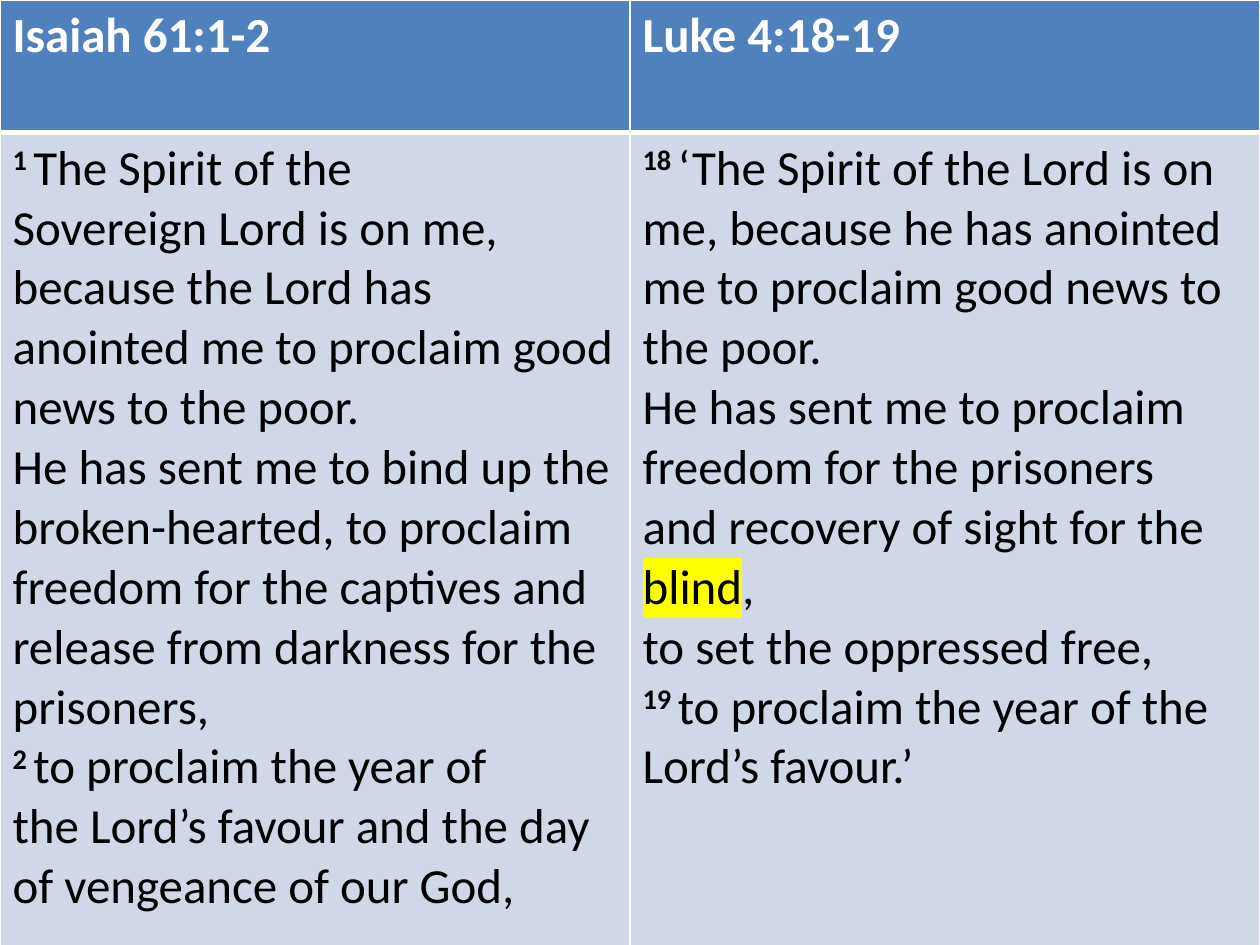
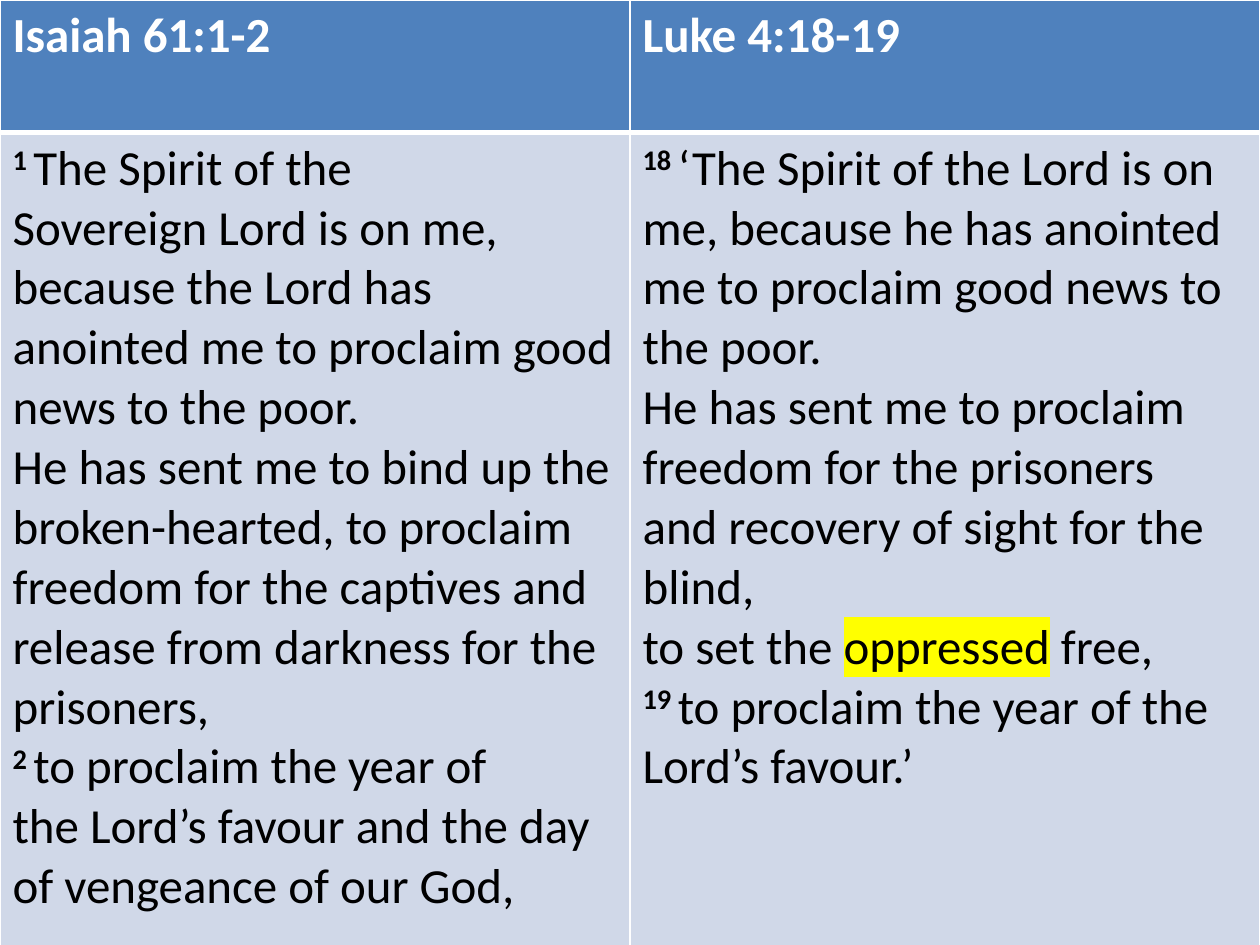
from pptx import Presentation
from pptx.dml.color import RGBColor as RGB
from pptx.oxml.ns import qn
from pptx.util import Inches, Pt
from lxml.etree import SubElement as sub, Element

WHITE = RGB(0xFF, 0xFF, 0xFF)
BLACK = RGB(0, 0, 0)
YELLOW = RGB(0xFF, 0xFF, 0)
HEADER_BLUE = RGB(0x4F, 0x81, 0xBD)
BODY_BLUE = RGB(0xD0, 0xD8, 0xE8)

NBSP = chr(160)
BLANK_LAYOUT = 6
HEADER_SHARE, BODY_SHARE = 0.14, 0.88

HEADINGS = ("Isaiah 61:1-2", "Luke 4:18-19")
ISAIAH = (
    ("1", "The Spirit of the Sovereign~Lord~is on me, because the~Lord~has "
          "anointed me to proclaim good news to the poor.\n"
          "He has sent me to bind up the broken-hearted, to proclaim freedom "
          "for the captives and release from darkness for the prisoners, \n"),
    ("2", "to proclaim the year of the~Lord’s favour and the day of vengeance "
          "of our God,"),
)
LUKE = (
    ("18", "‘The Spirit of the Lord is on me, because he has anointed me to "
           "proclaim good news to the poor.\n"
           "He has sent me to proclaim freedom for the prisoners\n"
           "and recovery of sight for the blind,\n"
           "to set the oppressed free,\n"),
    ("19", "to proclaim the year of the Lord’s favour.’"),
)
HIGHLIGHTS = ("blind", "oppressed")


class Deck:
    """Hold the presentation style and the slide being built."""

    font, size = "Calibri", Pt(28)

    def __init__(self):
        self.prs = Presentation()
        self.prs.slide_width, self.prs.slide_height = Inches(10), Inches(7.5)

    def new_slide(self):
        self.s = self.prs.slides.add_slide(self.prs.slide_layouts[BLANK_LAYOUT])

    def run(self, p, text, color=BLACK, bold=False, raised=False, marked=False):
        for i, line in enumerate(text.replace("~", NBSP).split("\n")):
            if i:
                p.add_line_break()
            if not line:
                continue
            r = p.add_run()
            r.text = line
            f = r.font
            f.name, f.size, f.bold = self.font, self.size, bold
            f.color.rgb = color
            rpr = f._element
            if raised:
                rpr.set("baseline", "30000")
            if marked:
                hl = Element(qn("a:highlight"))
                sub(hl, qn("a:srgbClr"), val=str(YELLOW))
                rpr.find(qn("a:solidFill")).addnext(hl)

    def verses(self, p, passage, marked_word):
        for number, text in passage:
            self.run(p, number + NBSP, bold=True, raised=True)
            before, word, after = text.partition(marked_word)
            self.run(p, before)
            self.run(p, word, marked=True)
            self.run(p, after)

    def style_cell(self, cell, fill, borders):
        cell.fill.solid()
        cell.fill.fore_color.rgb = fill
        tc_pr = cell._tc.get_or_add_tcPr()
        for i, (side, width) in enumerate(borders.items()):
            ln = Element(qn(f"a:ln{side}"), w=str(Pt(width)))
            sub(sub(ln, qn("a:solidFill")), qn("a:srgbClr"), val=str(WHITE))
            tc_pr.insert(i, ln)

    def comparison(self, headings, passages, marked_word):
        w, h = self.prs.slide_width, self.prs.slide_height
        row_heights = [int(h * share) for share in (HEADER_SHARE, BODY_SHARE)]
        table = self.s.shapes.add_table(
            2, len(headings), 0, 0, w, sum(row_heights)).table
        for row, height in zip(table.rows, row_heights):
            row.height = height
        for col, (heading, passage) in enumerate(zip(headings, passages)):
            head, body = table.cell(0, col), table.cell(1, col)
            self.style_cell(head, HEADER_BLUE, dict(L=1, R=1, T=1, B=3))
            self.style_cell(body, BODY_BLUE, dict(L=1, R=1, T=3, B=1))
            self.run(head.text_frame.paragraphs[0], heading, WHITE, bold=True)
            self.verses(body.text_frame.paragraphs[0], passage,
                        marked_word if passage is LUKE else NBSP)


def main():
    deck = Deck()
    for word in HIGHLIGHTS:
        deck.new_slide()
        deck.comparison(HEADINGS, (ISAIAH, LUKE), word)
    deck.prs.save("out.pptx")


if __name__ == "__main__":
    main()
